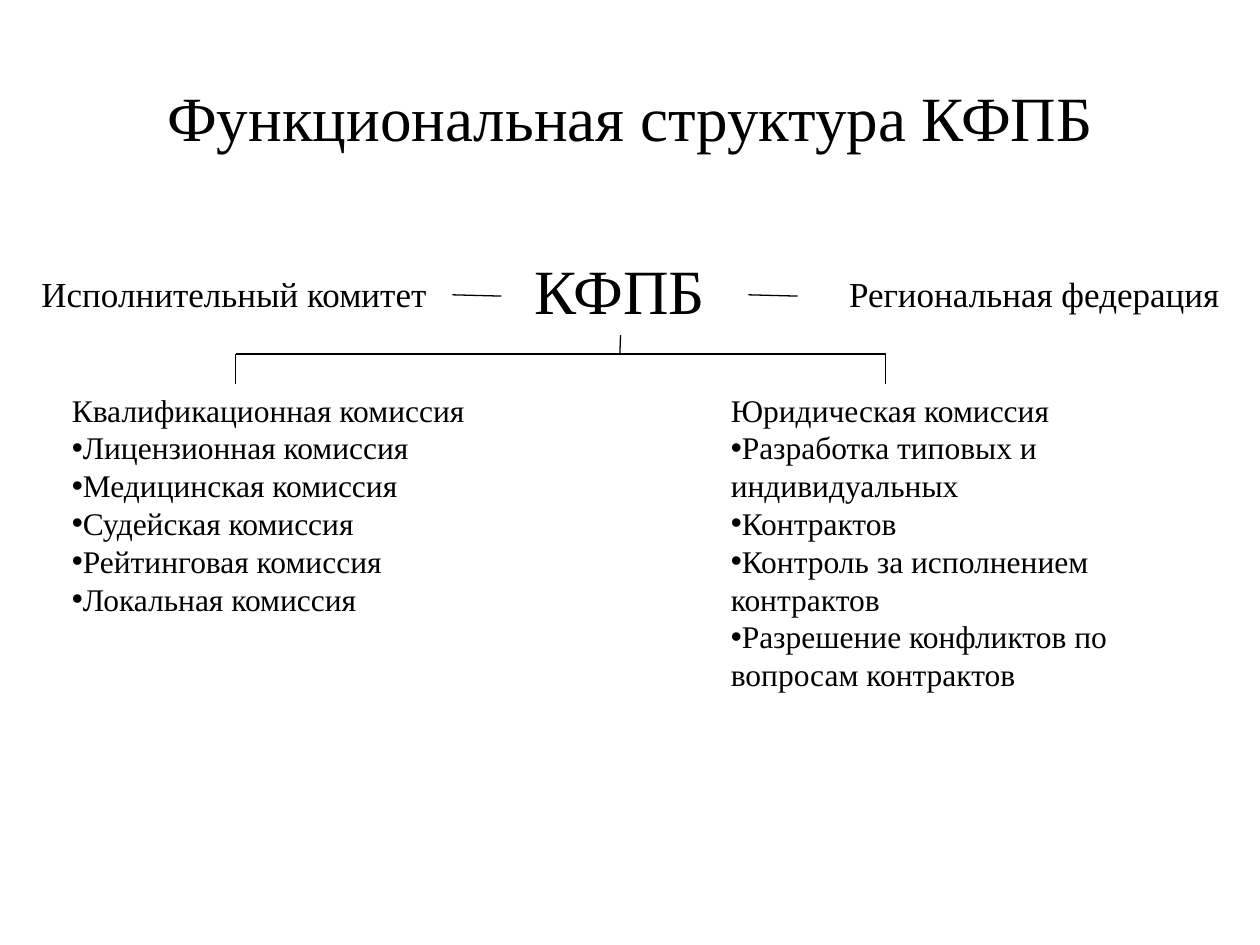
from pptx import Presentation
from pptx.dml.color import RGBColor
from pptx.enum.shapes import MSO_CONNECTOR
from pptx.enum.text import MSO_ANCHOR, MSO_AUTO_SIZE, PP_ALIGN
from pptx.oxml.ns import qn
from pptx.util import Inches, Pt
from lxml import etree

BLACK = RGBColor(0x00, 0x00, 0x00)
WHITE = RGBColor(0xFF, 0xFF, 0xFF)
FONT = "Times New Roman"


def write(shape, lines, size, align=PP_ALIGN.LEFT, anchor=MSO_ANCHOR.TOP,
          wrap=True, fit=MSO_AUTO_SIZE.SHAPE_TO_FIT_TEXT):
    """Fill a shape with text; every line after the first is bulleted."""
    frame = shape.text_frame
    frame.text = "\n".join(lines)
    frame.word_wrap = wrap
    frame.auto_size = fit
    frame.vertical_anchor = anchor
    for index, paragraph in enumerate(frame.paragraphs):
        paragraph.alignment = align
        paragraph.space_before = Pt(0)
        font = paragraph.runs[0].font
        font.name, font.size, font.color.rgb = FONT, Pt(size), BLACK
        properties = paragraph._p.get_or_add_pPr()
        properties.set("marL", "0")
        properties.set("indent", "0")
        if index:
            etree.SubElement(properties, qn("a:buChar")).set("char", "•")
        else:
            etree.SubElement(properties, qn("a:buNone"))


def draw_line(x1, y1, x2, y2):
    line = slide.shapes.add_connector(
        MSO_CONNECTOR.STRAIGHT, Inches(x1), Inches(y1), Inches(x2), Inches(y2))
    line.line.color.rgb = BLACK
    line.line.width = Pt(0.75)
    etree.SubElement(line._element.spPr, qn("a:effectLst"))
    return line


prs = Presentation()
prs.slide_width, prs.slide_height = Inches(10), Inches(7.5)
slide = prs.slides.add_slide(prs.slide_layouts[3])  # Two Content
slide.background.fill.solid()
slide.background.fill.fore_color.rgb = WHITE

# Title
title = slide.shapes.title
title.left, title.top = Inches(0.5), Inches(0.3)
title.width, title.height = Inches(9), Inches(1.25)
write(title, ["Функциональная структура КФПБ"], 36, align=PP_ALIGN.CENTER,
      anchor=MSO_ANCHOR.MIDDLE, fit=MSO_AUTO_SIZE.NONE)

# Top row: the federation between its two partner bodies
bodies = {}
for text, size, left, top, width, height in [
    ("КФПБ", 36, 4.14, 1.95, 1.57, 0.71),
    ("Исполнительный комитет", 20, 0.23, 2.11, 3.29, 0.44),
    ("Региональная федерация", 20, 6.64, 2.11, 3.17, 0.44),
]:
    bodies[text] = slide.shapes.add_textbox(
        Inches(left), Inches(top), Inches(width), Inches(height))
    write(bodies[text], [text], size, wrap=False)

# Commissions
commissions = [
    (0.47, 3.35, 1.92, False, [
        "Квалификационная комиссия",
        "Лицензионная комиссия",
        "Медицинская комиссия",
        "Судейская комиссия",
        "Рейтинговая комиссия",
        "Локальная комиссия",
    ]),
    (5.7, 4.06, 2.52, True, [
        "Юридическая комиссия",
        "Разработка типовых и индивидуальных",
        "Контрактов",
        "Контроль за исполнением контрактов",
        "Разрешение конфликтов по вопросам контрактов",
    ]),
]
for number, (left, width, height, wrap, lines) in enumerate(commissions, 1):
    commission = slide.placeholders[number]
    commission.left, commission.top = Inches(left), Inches(3.05)
    commission.width, commission.height = Inches(width), Inches(height)
    write(commission, lines, 18, wrap=wrap)

# Dashes beside the federation
for left in (3.59, 5.94):
    draw_line(left, 2.34, left + 0.39, 2.35)

# Branch down to the commissions
BRANCH_LEFT, BRANCH_RIGHT, BRANCH_Y = 1.87, 7.03, 2.81
draw_line(BRANCH_LEFT, BRANCH_Y, BRANCH_RIGHT, BRANCH_Y)
for x in (BRANCH_LEFT, BRANCH_RIGHT):
    draw_line(x, BRANCH_Y, x, 3.05)
stem = draw_line(4.92, BRANCH_Y, 4.92, 2.66)
stem.end_connect(bodies["КФПБ"], 2)

prs.save("out.pptx")
